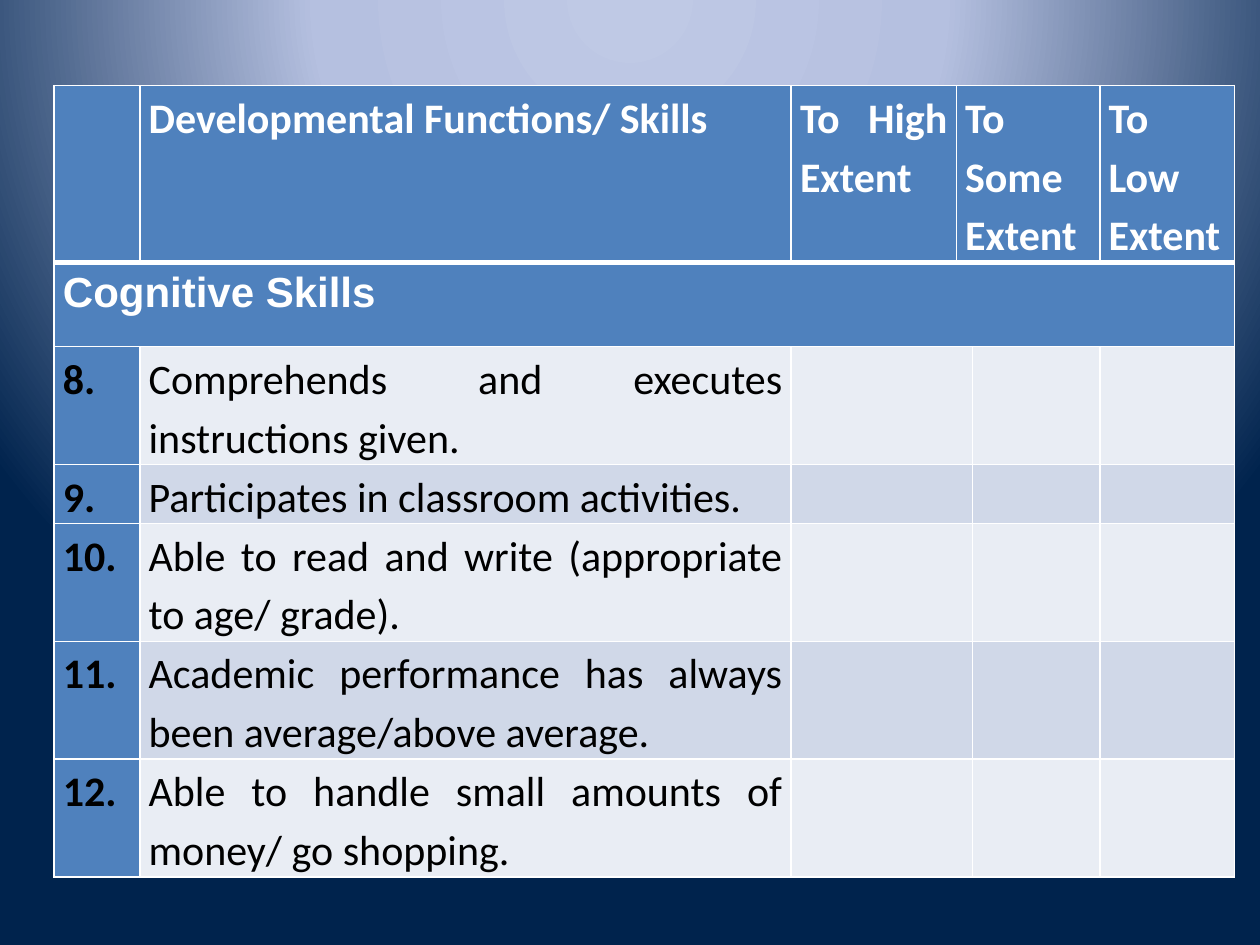
import pptx
import pptx.dml.color
import pptx.enum.text
import pptx.oxml
import pptx.oxml.ns
import pptx.util

Inches = pptx.util.Inches
Pt = pptx.util.Pt
RGBColor = pptx.dml.color.RGBColor

WHITE = RGBColor(0xFF, 0xFF, 0xFF)
BLACK = RGBColor(0x00, 0x00, 0x00)
BLUE = RGBColor(0x4F, 0x81, 0xBD)
PALE_BAND = RGBColor(0xE9, 0xED, 0xF4)
DARK_BAND = RGBColor(0xD0, 0xD8, 0xE8)
GLOW_STOPS = [
    (0, RGBColor(0xBF, 0xC9, 0xE5)),
    (40, RGBColor(0xB5, 0xC0, 0xE0)),
    (100, RGBColor(0x00, 0x23, 0x4D)),
]

COLUMN_WIDTHS = [0.68, 5.17, 1.31, 0.13, 1.01, 1.07]
ROW_HEIGHTS = [1, 0.67, 0.67, 0.33, 0.67, 0.67, 0.67]
HEADINGS = {
    1: "Developmental Functions/ Skills",
    2: "To High Extent",
    3: "To Some Extent",
    5: "To Low Extent",
}
SECTION = "Cognitive Skills"
FIRST_NUMBER = 8
SKILLS = [
    "Comprehends and executes instructions given.",
    "Participates in classroom activities.",
    "Able to read and write (appropriate to age/ grade).",
    "Academic performance has always been average/above average.",
    "Able to handle small amounts of money/ go shopping.",
]
HEADING_FONT = {"name": "Calibri", "size": Pt(24), "bold": True, "color": WHITE}
SECTION_FONT = {**HEADING_FONT, "name": "Arial"}
NUMBER_FONT = {**HEADING_FONT, "color": BLACK}
SKILL_FONT = {**NUMBER_FONT, "bold": False}
MARGINS = {
    "margin_left": Inches(0.07),
    "margin_right": Inches(0.07),
    "margin_top": 0,
    "margin_bottom": 0,
}
JUSTIFIED = {
    "alignment": pptx.enum.text.PP_ALIGN.JUSTIFY,
    "line_spacing": 1.15,
}


def apply_format(target, values):
    for attribute, value in values.items():
        setattr(target, attribute, value)


def paint_background(slide):
    slide.background.fill.solid()
    solid = slide.element.find(".//" + pptx.oxml.ns.qn("p:bgPr"))[0]
    stops = "".join(
        f'<a:gs pos="{position * 1000}"><a:srgbClr val="{color}"/></a:gs>'
        for position, color in GLOW_STOPS
    )
    glow = pptx.oxml.parse_xml(
        f'<a:gradFill {pptx.oxml.ns.nsdecls("a")} rotWithShape="1">'
        f'<a:gsLst>{stops}</a:gsLst><a:path path="circle">'
        '<a:fillToRect l="50000" t="-80000" r="50000" b="180000"/>'
        "</a:path></a:gradFill>"
    )
    solid.getparent().replace(solid, glow)


def draw_borders(cell, top=1, bottom=1):
    widths = {"lnL": 1, "lnR": 1, "lnT": top, "lnB": bottom}
    properties = cell._tc.get_or_add_tcPr()
    for order, (side, width) in enumerate(widths.items()):
        border = pptx.oxml.parse_xml(
            f'<a:{side} {pptx.oxml.ns.nsdecls("a")} w="{Pt(width)}">'
            f'<a:solidFill><a:srgbClr val="{WHITE}"/></a:solidFill></a:{side}>'
        )
        properties.insert(order, border)


def style_cell(cell, color, **borders):
    cell.fill.solid()
    cell.fill.fore_color.rgb = color
    apply_format(cell, MARGINS)
    draw_borders(cell, **borders)


def write_cell(cell, text, font):
    paragraph = cell.text_frame.paragraphs[0]
    apply_format(paragraph, JUSTIFIED)
    run = paragraph.add_run()
    run.text = text
    values = dict(font)
    run.font.color.rgb = values.pop("color")
    apply_format(run.font, values)


def fill_heading_rows(table):
    for column in range(len(COLUMN_WIDTHS)):
        style_cell(table.cell(0, column), BLUE, bottom=3)
        style_cell(table.cell(1, column), BLUE, top=3)
    for column, heading in HEADINGS.items():
        write_cell(table.cell(0, column), heading, HEADING_FONT)
    write_cell(table.cell(1, 0), SECTION, SECTION_FONT)
    table.cell(0, 3).merge(table.cell(0, 4))
    table.cell(1, 0).merge(table.cell(1, len(COLUMN_WIDTHS) - 1))


def fill_skill_rows(table):
    for index, skill in enumerate(SKILLS):
        row = index + 2
        band = DARK_BAND if index % 2 else PALE_BAND
        for column in range(len(COLUMN_WIDTHS)):
            style_cell(table.cell(row, column), band if column else BLUE)
        write_cell(table.cell(row, 0), f"{FIRST_NUMBER + index}.", NUMBER_FONT)
        write_cell(table.cell(row, 1), skill, SKILL_FONT)
        table.cell(row, 2).merge(table.cell(row, 3))


def add_checklist(slide, left, top, width, height):
    checklist = slide.shapes.add_table(
        len(ROW_HEIGHTS), len(COLUMN_WIDTHS), left, top, width, height
    )
    table = checklist.table
    for column, column_width in zip(table.columns, COLUMN_WIDTHS):
        column.width = Inches(column_width)
    for row, row_height in zip(table.rows, ROW_HEIGHTS):
        row.height = Inches(row_height)
    fill_heading_rows(table)
    fill_skill_rows(table)
    checklist.height = height


def main():
    presentation = pptx.Presentation()
    presentation.slide_width = Inches(10)
    presentation.slide_height = Inches(7.5)
    slide = presentation.slides.add_slide(presentation.slide_layouts[6])
    paint_background(slide)
    add_checklist(slide, Inches(0.43), Inches(0.68), Inches(9.37), Inches(6.19))
    presentation.save("out.pptx")


if __name__ == "__main__":
    main()
